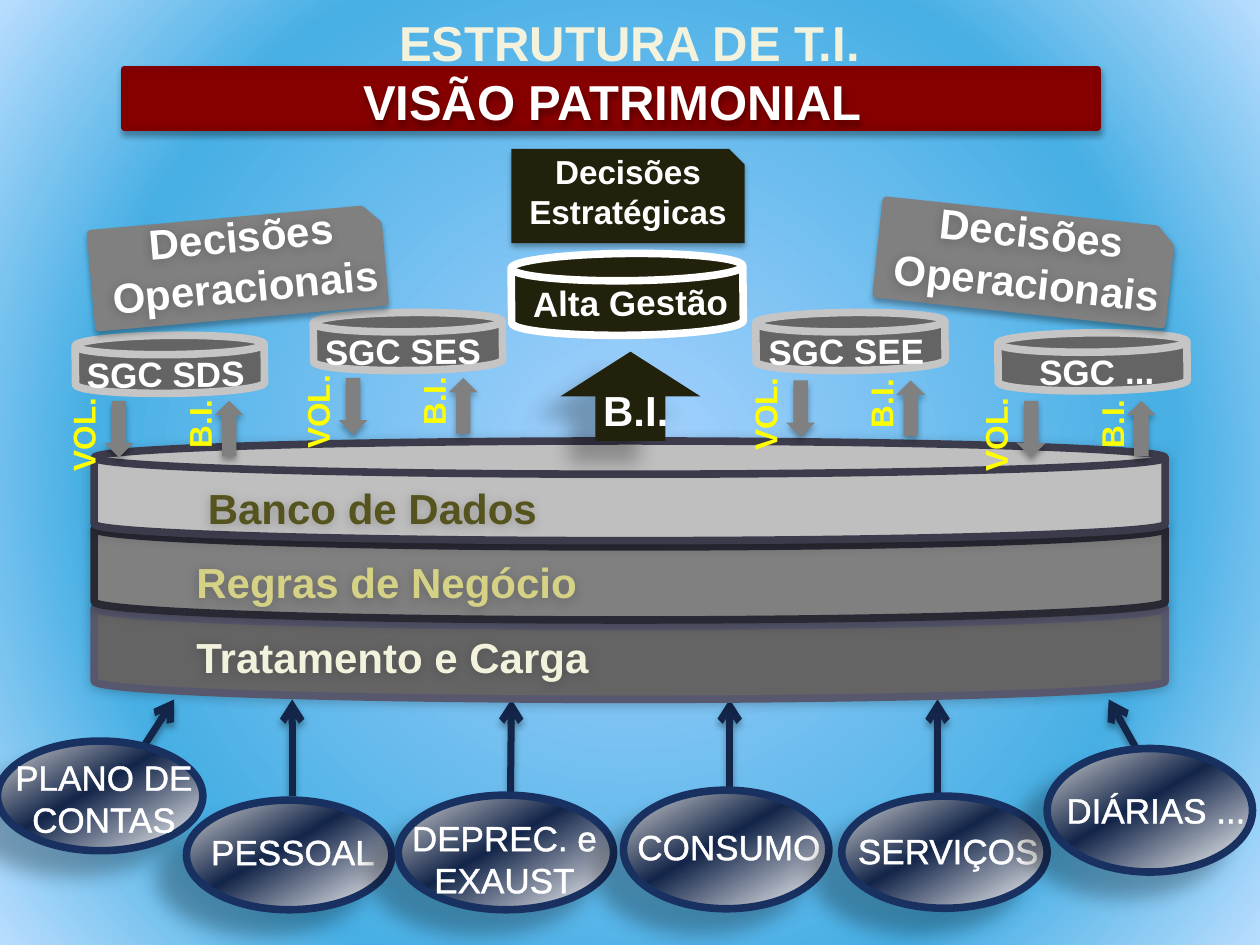
from lxml.etree import SubElement
from pptx import Presentation
from pptx.dml.color import RGBColor
from pptx.enum.shapes import MSO_CONNECTOR, MSO_SHAPE
from pptx.enum.text import MSO_ANCHOR, MSO_AUTO_SIZE, PP_ALIGN
from pptx.oxml import parse_xml
from pptx.oxml.ns import nsdecls, qn
from pptx.util import Cm, Pt

WHITE = RGBColor(0xFF, 0xFF, 0xFF)
CREAM = RGBColor(0xF3, 0xF2, 0xDC)
SAND = RGBColor(0xD5, 0xD2, 0x86)
OLIVE = RGBColor(0x56, 0x54, 0x1E)
YELLOW = RGBColor(0xFF, 0xFF, 0x00)
BLACK_OLIVE = RGBColor(0x22, 0x21, 0x0C)
DARK_GREY = RGBColor(0x64, 0x64, 0x64)
GREY = RGBColor(0x80, 0x80, 0x80)
LIGHT_GREY = RGBColor(0xBF, 0xBF, 0xBF)
RIM_GREY = RGBColor(0xC5, 0xC5, 0xC5)
NAVY = RGBColor(0x13, 0x25, 0x49)
BLUE = RGBColor(0x19, 0x31, 0x61)
RED = RGBColor(0x86, 0x00, 0x00)
DARK_RED = RGBColor(0x80, 0x00, 0x00)
LAYER_RIMS = [RGBColor(0x57, 0x57, 0x6E), RGBColor(0x29, 0x29, 0x34), RGBColor(0x3B, 0x3B, 0x4B)]

FONT = "Arial"
THICK = 4.33
TILT = 359.4
SKY = [(0, "A9D3FF"), (69, "47AFE4"), (100, "B9DDFE")]
METAL = [(0, "D7D7D7"), (45, "132549"), (100, "FFFFFF")]

# Shadows: opacity in percent, blur and distance in points, direction in degrees
NEAR = (32, 3.5, 2.2, 90)
FAR = (28, 11.8, 19.7, 141)
LAYER_SHADOW = (20, 6, 1, 135)
ARROW_SHADOW = (35, 4, 3, 90)

# Positions are in centimetres: left, top, width, height
INPUT_ARROWS = [((2.79, 15.21), 3.51), ((23.29, 15.77), 22.35), ((18.9, 16.33), 18.9),
                ((14.71, 16.13), 14.71), ((10.29, 16.18), 10.31), ((5.89, 16.05), 5.89)]
INPUT_ARROW_TOP = 14.1
INPUTS = [
    ("PESSOAL", (3.76, 16.13, 4.14, 2.21), (3.3, 16.61, 5.21, 1.12)),
    ("DEPREC. e EXAUST", (8.03, 16.03, 4.34, 2.31), (7.44, 16.33, 5.46, 1.96)),
    ("CONSUMO", (12.57, 15.93, 4.14, 2.39), (12.09, 16.51, 5.21, 1.12)),
    ("SERVIÇOS", (16.97, 16.05, 4.14, 2.26), (16.51, 16.59, 5.21, 1.12)),
    ("DIÁRIAS ...", (21.11, 15.09, 4.14, 2.49), (20.7, 15.77, 5.21, 1.12)),
    ("PLANO DE CONTAS", (-0.05, 14.94, 4.14, 2.21), (-0.51, 15.11, 5.21, 1.96)),
]
# Label, top, height, fill, text colour, text left, text top
LAYERS = [
    ("Tratamento e Carga", 11.89, 2.21, DARK_GREY, CREAM, 3.71, 12.6),
    ("Regras de Negócio", 10.29, 2.21, GREY, SAND, 3.71, 11.1),
    ("Banco de Dados", 8.89, 2.01, LIGHT_GREY, OLIVE, 3.94, 9.6),
]
# Label, left, top, shift of the label from the disk
SYSTEMS = [("SGC SDS", 1.52, 6.76, -0.02), ("SGC SES", 6.32, 6.3, -0.02),
           ("SGC SEE", 15.24, 6.3, 0), ("SGC ...", 20.12, 6.71, 0.58)]
OPERATIONS = [((1.9, 4.45), (1.5, 4.11), 354.9), ((17.75, 4.34), (17.35, 4.04), 6.1)]
FLOWS = [(2.11, 8.08), (6.83, 7.62), (15.85, 7.67), (20.5, 8.08)]


def stops_xml(stops):
    marks = "".join(f'<a:gs pos="{place * 1000}"><a:srgbClr val="{color}"/></a:gs>'
                    for place, color in stops)
    return f"<a:gsLst>{marks}</a:gsLst>"


def add_shadow(properties, shadow):
    """Put an outer shadow in the effect list, which is made when missing."""
    opacity, blur, distance, direction = shadow
    effects = properties.find(qn("a:effectLst"))
    if effects is None:
        effects = SubElement(properties, qn("a:effectLst"))
    outer = SubElement(effects, qn("a:outerShdw"), blurRad=str(Pt(blur)), dist=str(Pt(distance)),
                       dir=str(direction * 60000), algn="ctr", rotWithShape="0")
    color = SubElement(outer, qn("a:srgbClr"), val="000000")
    SubElement(color, qn("a:alpha"), val=str(opacity * 1000))


def set_text(frame, words, size, color, bold=True, align=PP_ALIGN.LEFT, outline=0):
    para = frame.paragraphs[0]
    para.alignment = align
    span = para.add_run()
    span.text = words
    span.font.name = FONT
    span.font.size = Pt(size)
    span.font.bold = bold
    span.font.color.rgb = color
    if outline:
        span.font._element.insert(0, parse_xml(
            f'<a:ln {nsdecls("a")} w="{Pt(outline)}"><a:solidFill>'
            f'<a:srgbClr val="{color}"/></a:solidFill></a:ln>'))


def add_label(page, words, place, size, color, rotation=0, shadow=None, **style):
    box = page.shapes.add_textbox(*map(Cm, place))
    box.rotation = rotation
    box.text_frame.word_wrap = True
    box.text_frame.auto_size = MSO_AUTO_SIZE.SHAPE_TO_FIT_TEXT
    set_text(box.text_frame, words, size, color, **style)
    if shadow:
        add_shadow(box._element.spPr, shadow)


def add_figure(page, kind, place, fill, line=None, shadow=None, rotation=0):
    """Add a preset shape; fill is a colour or a list of gradient stops."""
    shape = page.shapes.add_shape(kind, *map(Cm, place))
    shape.rotation = rotation
    shape.shadow.inherit = False
    if isinstance(fill, list):
        shape.fill.gradient()
        gradient = shape._element.spPr.find(qn("a:gradFill"))
        gradient.getparent().replace(gradient, parse_xml(
            f'<a:gradFill {nsdecls("a")} rotWithShape="1">{stops_xml(fill)}'
            f'<a:lin ang="{60 * 60000}" scaled="0"/></a:gradFill>'))
    else:
        shape.fill.solid()
        shape.fill.fore_color.rgb = fill
    if line is None:
        shape.line.fill.background()
    else:
        shape.line.color.rgb = line
        shape.line.width = Pt(THICK)
    if shadow:
        add_shadow(shape._element.spPr, shadow)


def add_arrow(page, start, end):
    arrow = page.shapes.add_connector(MSO_CONNECTOR.STRAIGHT, *map(Cm, start + end))
    arrow.line.color.rgb = NAVY
    arrow.line.width = Pt(4)
    SubElement(arrow.line._get_or_add_ln(), qn("a:tailEnd"), type="arrow")
    add_shadow(arrow._element.spPr, ARROW_SHADOW)


def main():
    deck = Presentation()
    deck.slide_width, deck.slide_height = Cm(25.4), Cm(19.05)
    page = deck.slides.add_slide(deck.slide_layouts[5])
    page._element.cSld.insert(0, parse_xml(
        f'<p:bg {nsdecls("p", "a")}><p:bgPr><a:gradFill rotWithShape="1">{stops_xml(SKY)}'
        '<a:path path="circle"><a:fillToRect l="50000" t="50000" r="50000" b="50000"/></a:path>'
        '</a:gradFill><a:effectLst/></p:bgPr></p:bg>'))
    disk = MSO_SHAPE.FLOWCHART_MAGNETIC_DISK
    center = PP_ALIGN.CENTER

    title = page.shapes.title
    title.left, title.top, title.width, title.height = map(Cm, (0.08, 0.13, 25.22, 1.6))
    title.text_frame.vertical_anchor = MSO_ANCHOR.TOP
    set_text(title.text_frame, "ESTRUTURA DE T.I.", 28, CREAM, align=center)

    for start, end_left in INPUT_ARROWS:
        add_arrow(page, start, (end_left, INPUT_ARROW_TOP))

    add_figure(page, MSO_SHAPE.SNIP_1_RECTANGLE, (10.31, 3, 4.7, 1.9), BLACK_OLIVE, shadow=NEAR)
    add_label(page, "Decisões Estratégicas", (10.31, 2.92, 4.7, 1.88), 19, WHITE, align=center)

    for words, place, label_place in INPUTS:
        add_figure(page, MSO_SHAPE.OVAL, place, METAL, BLUE, FAR)
        add_label(page, words, label_place, 20, WHITE, bold=False, align=center, outline=1.45)

    for words, left, top, shift in SYSTEMS:
        add_figure(page, disk, (left, top, 3.81, 1.17), DARK_GREY, RIM_GREY, rotation=TILT)
        add_label(page, words, (left + shift, top + 0.22, 3.99, 1.12), 20, WHITE, TILT)
    add_figure(page, disk, (10.31, 5.11, 4.67, 1.65), BLACK_OLIVE, WHITE, rotation=TILT)
    add_label(page, "Alta Gestão", (10.41, 5.54, 4.6, 1.12), 20, WHITE, TILT, align=center)

    for corner, label_corner, rotation in OPERATIONS:
        add_figure(page, MSO_SHAPE.SNIP_1_RECTANGLE, corner + (5.79, 1.9), GREY, GREY, NEAR, rotation)
        add_label(page, "Decisões Operacionais", label_corner + (6.81, 2.31), 24, WHITE,
                  rotation, LAYER_SHADOW, align=center)

    for (words, top, height, fill, color, text_left, text_top), rim in zip(LAYERS, LAYER_RIMS):
        add_figure(page, disk, (1.9, top, 21.59, height), fill, rim, LAYER_SHADOW)
        add_label(page, words, (text_left, text_top, 17.6, 1.09), 24, color,
                  shadow=LAYER_SHADOW, outline=0.75)

    add_figure(page, MSO_SHAPE.UP_ARROW, (11.3, 7.09, 2.82, 1.8), BLACK_OLIVE, shadow=FAR)
    add_label(page, "B.I.", (11.91, 7.62, 1.88, 1.02), 24, WHITE)

    for left, top in FLOWS:
        add_figure(page, MSO_SHAPE.DOWN_ARROW, (left, top, 0.58, 1.14), GREY, shadow=NEAR)
        add_figure(page, MSO_SHAPE.UP_ARROW, (left + 2.22, top, 0.58, 1.12), GREY, shadow=NEAR)
        add_label(page, "VOL.", (left - 1.46, top + 0.13, 2.06, 1.02), 18, YELLOW, 270, outline=0.75)
        add_label(page, "B.I.", (left + 1.02, top - 0.19, 1.78, 1.02), 18, YELLOW, 270, outline=0.75)

    add_figure(page, MSO_SHAPE.RECTANGLE, (2.51, 1.4, 19.61, 1.17), RED, DARK_RED, NEAR)
    add_label(page, "VISÃO PATRIMONIAL", (2.21, 1.32, 20.27, 1.45), 28, WHITE,
              shadow=NEAR, align=center)
    deck.save("out.pptx")


if __name__ == "__main__":
    main()
